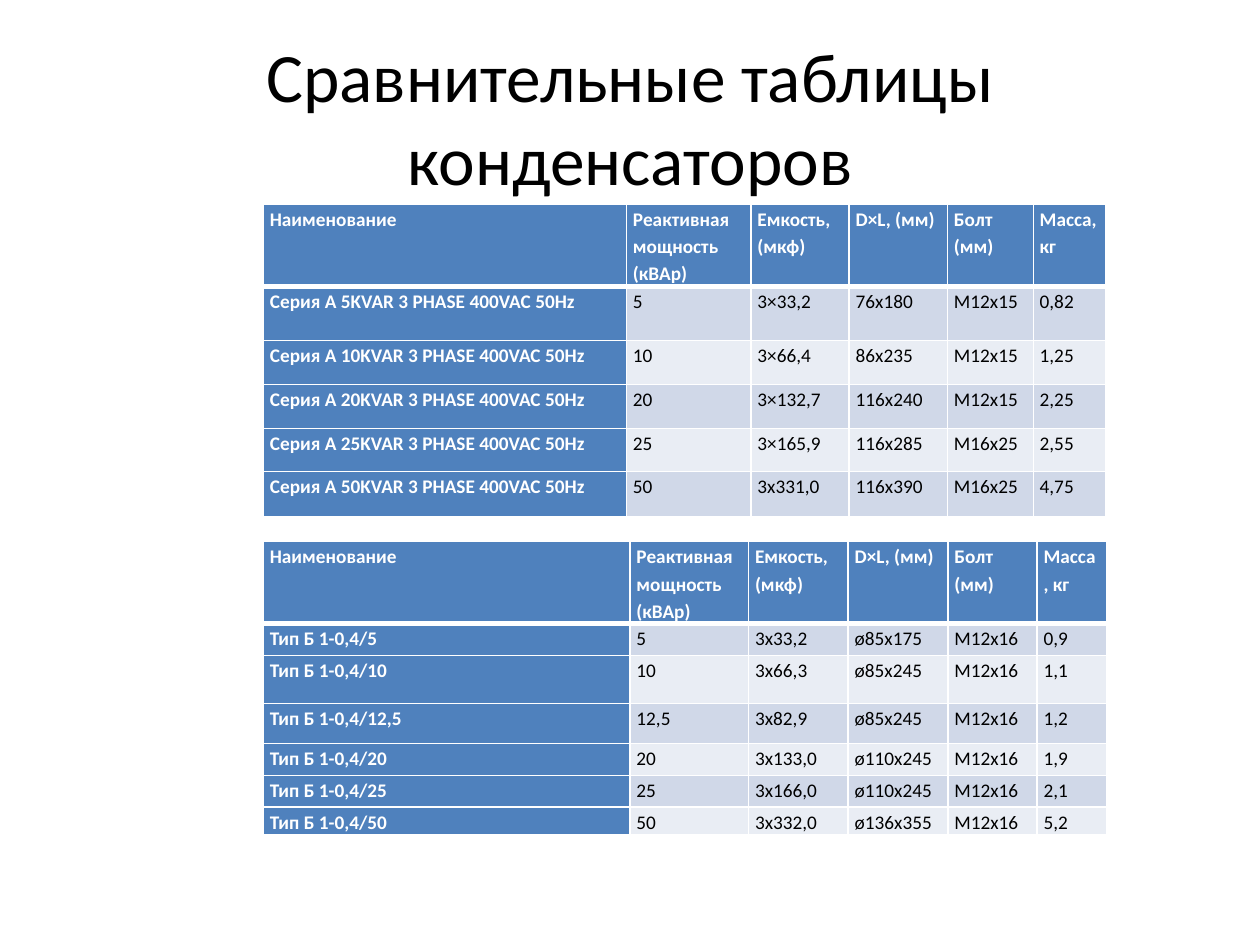
from lxml import etree
from pptx import Presentation
from pptx import util as u
from pptx.dml.color import RGBColor
from pptx.enum import text
from pptx.oxml.ns import qn

FONT = "Calibri"
WHITE, BLACK, BLUE = "FFFFFF", "000000", "4F81BD"
BANDS = ("D0D8E8", "E9EDF4")
TABLE_LEFT = 5.31

HEADINGS = ("Наименование", "Реактивная мощность (кВАр)", "Емкость, (мкф)",
            "D×L, (мм)", "Болт (мм)", "Масса, кг")

PHASE_ROWS = [
    ("Серия А 5KVAR 3 PHASE 400VAC 50Hz", "5", "3×33,2", "76х180", "М12х15", "0,82"),
    ("Серия А 10KVAR 3 PHASE 400VAC 50Hz", "10", "3×66,4", "86х235", "М12х15", "1,25"),
    ("Серия А 20KVAR 3 PHASE 400VAC 50Hz", "20", "3×132,7", "116х240", "М12х15", "2,25"),
    ("Серия А 25KVAR 3 PHASE 400VAC 50Hz", "25", "3×165,9", "116х285", "М16х25", "2,55"),
    ("Серия А 50KVAR 3 PHASE 400VAC 50Hz", "50", "3x331,0", "116х390", "М16х25", "4,75"),
]
COMPACT_ROWS = [
    ("Тип Б 1-0,4/5", "5", "3x33,2", "ø85x175", "М12х16", "0,9"),
    ("Тип Б 1-0,4/10", "10", "3x66,3", "ø85x245", "М12х16", "1,1"),
    ("Тип Б 1-0,4/12,5", "12,5", "3x82,9", "ø85x245", "М12х16", "1,2"),
    ("Тип Б 1-0,4/20", "20", "3x133,0", "ø110x245", "М12х16", "1,9"),
    ("Тип Б 1-0,4/25", "25", "3x166,0", "ø110x245", "М12х16", "2,1"),
    ("Тип Б 1-0,4/50", "50", "3x332,0", "ø136x355", "М12х16", "5,2"),
]


def rgb(value):
    return RGBColor.from_string(value)


def add_span(para, words, size, color, bold=False):
    span = para.add_run()
    span.text = words
    span.font.name = FONT
    span.font.size = u.Pt(size)
    span.font.bold = bold
    span.font.color.rgb = rgb(color)


def set_borders(cell, top, bottom):
    """White borders; top and bottom widths are in points, the sides are 1 pt."""
    properties = cell._tc.get_or_add_tcPr()
    for side, width in (("L", 1), ("R", 1), ("T", top), ("B", bottom)):
        line = etree.SubElement(properties, qn(f"a:ln{side}"), w=str(u.Pt(width)))
        fill = etree.SubElement(line, qn("a:solidFill"))
        etree.SubElement(fill, qn("a:srgbClr"), val=WHITE)


def format_cell(cell, words, row, column):
    strong = row == 0 or column == 0
    set_borders(cell, top=3 if row == 1 else 1, bottom=3 if row == 0 else 1)
    cell.fill.solid()
    cell.fill.fore_color.rgb = rgb(BLUE if strong else BANDS[(row - 1) % 2])
    cell.margin_left = cell.margin_right = u.Cm(0.13)
    cell.margin_top = cell.margin_bottom = 0
    para = cell.text_frame.paragraphs[0]
    para.line_spacing = 1.15
    para.space_after = u.Pt(10)
    add_span(para, words, 11, WHITE if strong else BLACK, strong)


def add_capacitor_table(slide, top, widths, heights, rows):
    frame = slide.shapes.add_table(len(heights), len(widths), u.Cm(TABLE_LEFT), u.Cm(top),
                                   u.Cm(sum(widths)), u.Cm(sum(heights)))
    table = frame.table
    for column, width in zip(table.columns, widths):
        column.width = u.Cm(width)
    for line, height in zip(table.rows, heights):
        line.height = u.Cm(height)
    for row, values in enumerate([HEADINGS, *rows]):
        for column, words in enumerate(values):
            format_cell(table.cell(row, column), words, row, column)


def set_title(slide, words):
    title = slide.shapes.title
    title.left, title.top = u.Cm(1.27), u.Cm(0.76)
    title.width, title.height = u.Cm(22.86), u.Cm(3.18)
    box = title.text_frame
    box.word_wrap = True
    box.auto_size = text.MSO_AUTO_SIZE.NONE
    box.vertical_anchor = text.MSO_ANCHOR.MIDDLE
    para = box.paragraphs[0]
    para.alignment = text.PP_ALIGN.CENTER
    add_span(para, words, 39.6, BLACK)


def main():
    deck = Presentation()
    deck.slide_width, deck.slide_height = u.Cm(25.4), u.Cm(19.05)
    slide = deck.slides.add_slide(deck.slide_layouts.get_by_name("Title Only"))
    set_title(slide, "Сравнительные таблицы конденсаторов")
    add_capacitor_table(slide, 4.12, (7.32, 2.51, 1.98, 1.98, 1.73, 1.47),
                        (1.42, 1.09, 0.89, 0.89, 0.86, 0.91), PHASE_ROWS)
    add_capacitor_table(slide, 10.92, (7.39, 2.39, 2.01, 2.01, 1.8, 1.4),
                        (0.99, 0.64, 0.97, 0.81, 0.64, 0.64, 0.51), COMPACT_ROWS)
    deck.save("out.pptx")


if __name__ == "__main__":
    main()
